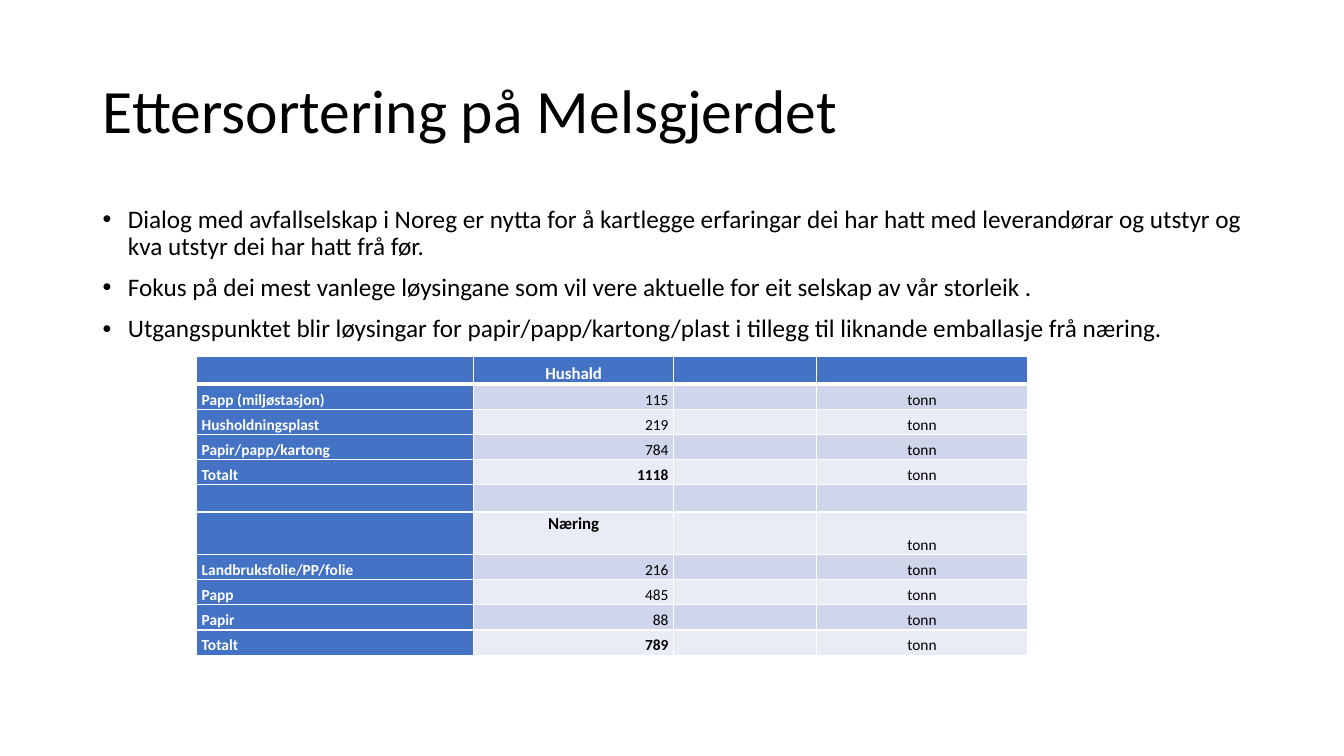
"""Builds the slide on sorting at Melsgjerdet, with its table of tonnes."""
import pptx
import pptx.dml.color
import pptx.enum.text
import pptx.oxml.ns
import pptx.util
from lxml import etree

Inches = pptx.util.Inches
Pt = pptx.util.Pt
RGBColor = pptx.dml.color.RGBColor
ALIGN = pptx.enum.text.PP_ALIGN
ANCHOR = pptx.enum.text.MSO_ANCHOR
qn = pptx.oxml.ns.qn

BLACK = RGBColor(0x00, 0x00, 0x00)
WHITE = RGBColor(0xFF, 0xFF, 0xFF)
BLUE = RGBColor(0x44, 0x72, 0xC4)
BANDS = (RGBColor(0xE9, 0xEB, 0xF5), RGBColor(0xCF, 0xD5, 0xEA))

TITLE = "Ettersortering på Melsgjerdet"
POINTS = (
    "Dialog med avfallselskap i Noreg er nytta for å kartlegge erfaringar dei har hatt "
    "med leverandørar og utstyr og kva utstyr dei har hatt frå før.",
    "Fokus på dei mest vanlege løysingane som vil vere aktuelle for eit selskap av vår storleik .",
    "Utgangspunktet blir løysingar for papir/papp/kartong/plast i tillegg til liknande "
    "emballasje frå næring.",
)
ROWS = (
    ("", "Hushald", ""),
    ("Papp (miljøstasjon)", "115", "tonn"),
    ("Husholdningsplast", "219", "tonn"),
    ("Papir/papp/kartong", "784", "tonn"),
    ("Totalt", "1118", "tonn"),
    ("", "", ""),
    ("", "Næring", "tonn"),
    ("Landbruksfolie/PP/folie", "216", "tonn"),
    ("Papp", "485", "tonn"),
    ("Papir", "88", "tonn"),
    ("Totalt", "789", "tonn"),
)
WIDTHS = (2.75, 1.98, 1.42, 2.09)
HEIGHTS = {0: 0.27, 5: 0.27, 6: 0.42}


class Deck:
    """Holds the style and the current slide."""

    def __init__(self, font):
        self.font = font
        self.show = pptx.Presentation()
        self.show.slide_width = Inches(13.33)
        self.show.slide_height = Inches(7.5)
        self.slide = self.show.slides.add_slide(self.show.slide_layouts[6])

    def style(self, para, size, color=BLACK, bold=False):
        """Format each run of a paragraph."""
        for run in para.runs:
            run.font.name = self.font
            run.font.size = Pt(size)
            run.font.bold = bold
            run.font.color.rgb = color

    def text(self, box, lines, size, anchor=ANCHOR.TOP, bullet=False):
        """Add a text box with one paragraph a line."""
        frame = self.slide.shapes.add_textbox(*map(Inches, box)).text_frame
        frame.word_wrap = True
        frame.vertical_anchor = anchor
        frame.text = "\n".join(lines)
        for para in frame.paragraphs:
            para.line_spacing = 0.9
            self.style(para, size)
            if bullet:
                para.space_before = Pt(10)
                props = para._p.get_or_add_pPr()
                props.set("marL", str(Inches(0.25)))
                props.set("indent", str(-Inches(0.25)))
                etree.SubElement(props, qn("a:buFont")).set("typeface", "Arial")
                etree.SubElement(props, qn("a:buChar")).set("char", "•")

    def border(self, cell, top, bottom):
        """Draw white lines round a cell."""
        props = cell._tc.get_or_add_tcPr()
        sides = (("L", 1), ("R", 1), ("T", top), ("B", bottom))
        for spot, (side, width) in enumerate(sides):
            line = etree.Element(qn("a:ln" + side), w=str(Pt(width)))
            fill = etree.SubElement(line, qn("a:solidFill"))
            etree.SubElement(fill, qn("a:srgbClr")).set("val", str(WHITE))
            props.insert(spot, line)

    def cell(self, cell, text, row, col):
        """Fill one table cell by its place."""
        head = text in ("Hushald", "Næring")
        dark = row == 0 or col == 0
        total = col == 1 and ROWS[row][0] == "Totalt"
        cell.fill.solid()
        cell.fill.fore_color.rgb = BLUE if dark else BANDS[row % 2]
        cell.margin_left = cell.margin_right = Inches(0.05)
        cell.margin_top = cell.margin_bottom = 0
        cell.vertical_anchor = ANCHOR.TOP if text == "Næring" else ANCHOR.BOTTOM
        cell.text_frame.text = text
        para = cell.text_frame.paragraphs[0]
        para.line_spacing = 1.07
        if col:
            para.alignment = ALIGN.RIGHT if col == 1 and not head else ALIGN.CENTER
        if text:
            self.style(para, 12 if head else 11, WHITE if dark else BLACK,
                       dark or head or total)
        else:
            etree.SubElement(para._p, qn("a:endParaRPr")).set("sz", "1100")
        self.border(cell, 3 if row == 1 else 1, 3 if row == 0 else 1)

    def table(self, left, top):
        """Add the table of tonnes."""
        highs = [HEIGHTS.get(row, 0.25) for row in range(len(ROWS))]
        size = map(Inches, (left, top, sum(WIDTHS), sum(highs)))
        grid = self.slide.shapes.add_table(len(ROWS), len(WIDTHS), *size).table
        grid.first_col = True
        for col, width in enumerate(WIDTHS):
            grid.columns[col].width = Inches(width)
        for row, (label, count, unit) in enumerate(ROWS):
            grid.rows[row].height = Inches(highs[row])
            for col, text in enumerate((label, count, "", unit)):
                self.cell(grid.cell(row, col), text, row, col)


def main():
    """Build and save the slide."""
    deck = Deck("Calibri")
    deck.text((0.92, 0.4, 11.5, 1.45), [TITLE], 44, ANCHOR.MIDDLE)
    deck.text((0.92, 2, 11.5, 4.76), POINTS, 18, bullet=True)
    deck.table(1.95, 3.54)
    deck.show.save("out.pptx")


if __name__ == "__main__":
    main()
